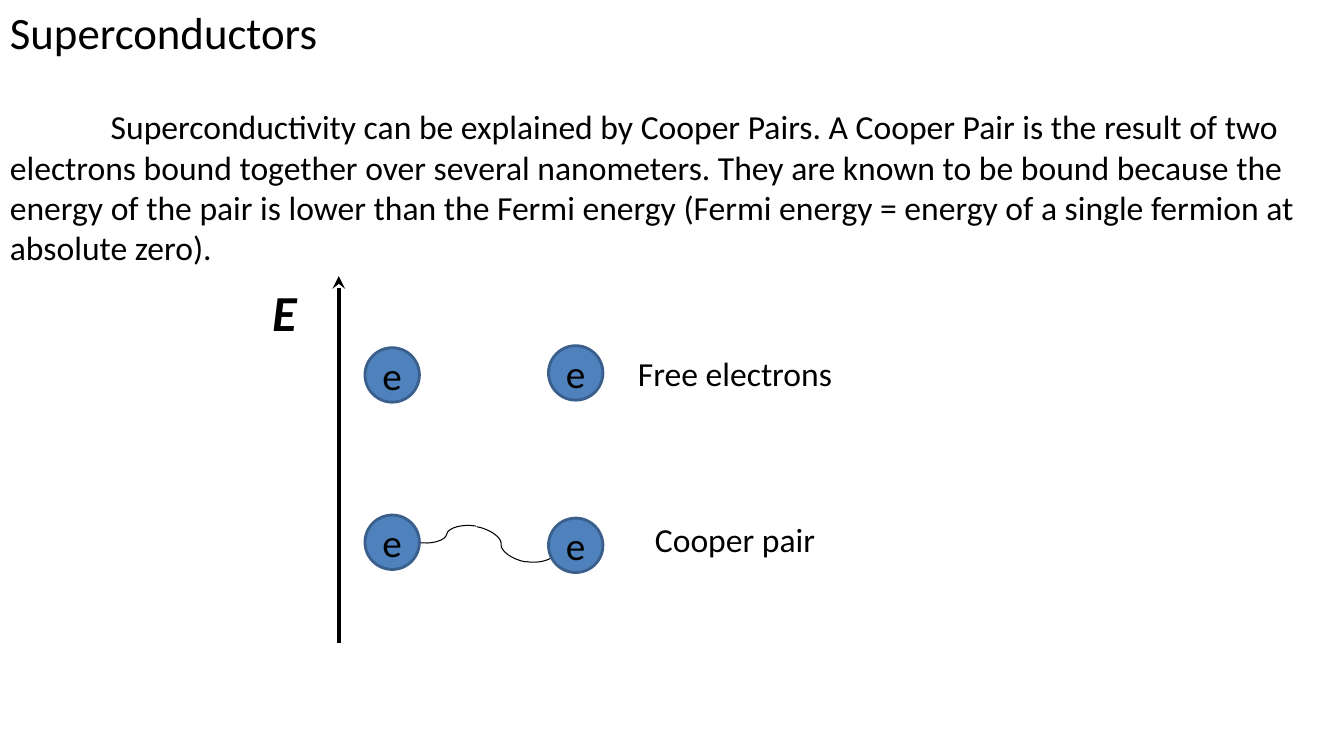
"""Build a slide on Cooper pairs in superconductors."""
from lxml import etree
from pptx import Presentation
from pptx import util as u
from pptx.dml.color import RGBColor
from pptx.enum import shapes, text
from pptx.oxml.ns import qn

BLACK = RGBColor(0x00, 0x00, 0x00)
BLUE = RGBColor(0x4F, 0x81, 0xBD)
EDGE = RGBColor(0x3A, 0x5F, 0x8C)

TITLE = "Superconductors"
BODY = (
    "Superconductivity can be explained by Cooper Pairs. A Cooper Pair is the "
    "result of two electrons bound together over several nanometers. They are "
    "known to be bound because the energy of the pair is lower than the Fermi "
    "energy (Fermi energy = energy of a single fermion at absolute zero)."
)
LABELS = [
    ("E", (2.54, 2.74, 0.56, 0.71), {"size": u.Pt(36), "bold": True, "italic": True}),
    ("Free electrons", (6.1, 3.45, 2.38, 0.5), {"size": u.Pt(24)}),
    ("Cooper pair", (6.1, 5.1, 2.38, 0.5), {"size": u.Pt(24)}),
]
BALLS = [(3.62, 3.45), (5.44, 3.43), (3.62, 5.11), (5.44, 5.14)]
SIZE = 0.54
WAVES = [(5.23, 5.36, 190), (4.7, 5.27, 10), (4.16, 5.17, 190)]
WIDE, HIGH = 0.54, 0.26
AXIS = (3.36, 6.38, 3.36, 2.74)

deck = Presentation()
deck.slide_width, deck.slide_height = u.Inches(13.33), u.Inches(7.5)
slide = deck.slides.add_slide(deck.slide_layouts[6])


def write(para, words, form):
    run = para.add_run()
    run.text = words
    run.font.color.rgb = BLACK
    for key, value in ({"name": "Calibri"} | form).items():
        setattr(run.font, key, value)


def add_box(place):
    box = slide.shapes.add_textbox(*map(u.Inches, place))
    box.text_frame.word_wrap = True
    return box.text_frame


def add_line(kind, ends, width):
    line = slide.shapes.add_connector(kind, *map(u.Inches, ends))
    line.line.color.rgb = BLACK
    line.line.width = u.Pt(width)
    etree.SubElement(line._element.spPr, qn("a:effectLst"))
    return line


for left, top, turn in WAVES:
    ends = [left, top, left + WIDE, top + HIGH]
    if turn > 180:
        ends[1], ends[3] = ends[3], ends[1]
    wave = add_line(shapes.MSO_CONNECTOR.CURVE, ends, 0.75)
    wave._element.spPr.find(qn("a:xfrm")).set("rot", str(turn * 60000))

frame = add_box((0, 0, 13.33, 2.73))
write(frame.paragraphs[0], TITLE, {"size": u.Pt(32)})
para = frame.add_paragraph()
para.space_before = u.Pt(34)
props = para._p.get_or_add_pPr()
props.set("marL", "0")
props.set("indent", str(u.Inches(1)))
write(para, BODY, {"size": u.Pt(24)})

axis = add_line(shapes.MSO_CONNECTOR.STRAIGHT, AXIS, 3)
etree.SubElement(axis.line._get_or_add_ln(), qn("a:tailEnd"), type="stealth")

for left, top in BALLS:
    ball = slide.shapes.add_shape(
        shapes.MSO_SHAPE.OVAL, *map(u.Inches, (left, top, SIZE, SIZE)))
    ball.shadow.inherit = False
    ball.fill.solid()
    ball.fill.fore_color.rgb = BLUE
    ball.line.color.rgb = EDGE
    ball.line.width = u.Pt(2)
    frame = ball.text_frame
    layout = {"word_wrap": False, "vertical_anchor": text.MSO_ANCHOR.MIDDLE,
              "margin_left": 0, "margin_right": 0, "margin_top": 0, "margin_bottom": 0}
    for key, value in layout.items():
        setattr(frame, key, value)
    frame.paragraphs[0].alignment = text.PP_ALIGN.CENTER
    write(frame.paragraphs[0], "e", {"size": u.Pt(28)})

for words, place, form in LABELS:
    para = add_box(place).paragraphs[0]
    para.alignment = text.PP_ALIGN.CENTER
    write(para, words, form)

deck.save("out.pptx")
